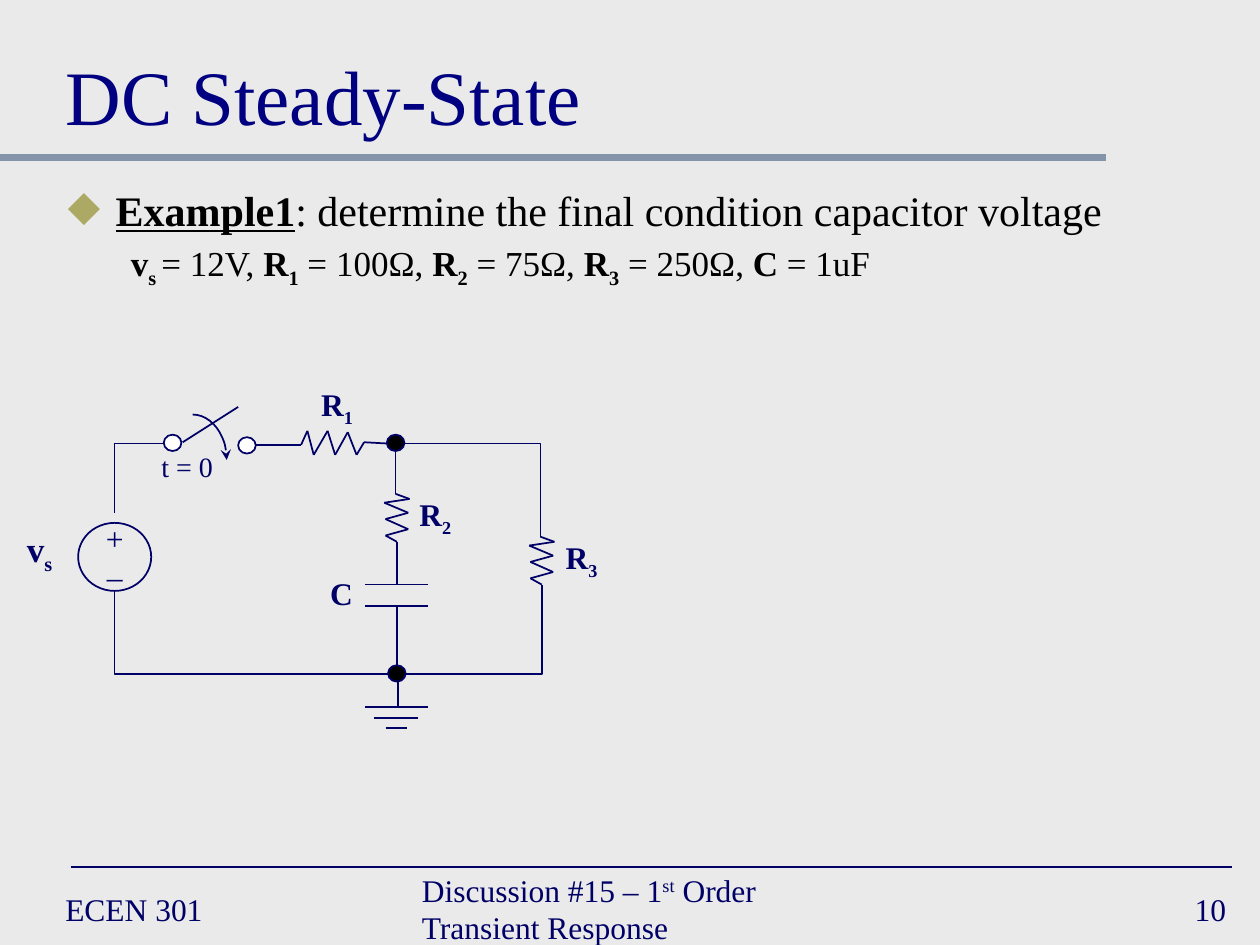
from dataclasses import dataclass
from itertools import pairwise

from lxml import etree
from pptx import Presentation
from pptx.dml.color import RGBColor
from pptx.enum.shapes import MSO_CONNECTOR, MSO_SHAPE
from pptx.enum.text import MSO_ANCHOR, PP_ALIGN
from pptx.oxml.ns import qn
from pptx.util import Inches, Pt

STRAIGHT, ELBOW = MSO_CONNECTOR.STRAIGHT, MSO_CONNECTOR.ELBOW
ELLIPSE, ARC = MSO_SHAPE.OVAL, MSO_SHAPE.ARC
LEFT, CENTER, RIGHT = PP_ALIGN.LEFT, PP_ALIGN.CENTER, PP_ALIGN.RIGHT
TOP, MIDDLE, BOTTOM = MSO_ANCHOR.TOP, MSO_ANCHOR.MIDDLE, MSO_ANCHOR.BOTTOM
SUB, SUPER = -25000, 30000


@dataclass(frozen=True)
class Theme:
    font: str = "Times New Roman"
    background: RGBColor = RGBColor(0xEA, 0xEA, 0xEA)
    ink: RGBColor = RGBColor(0, 0, 0x66)
    title: RGBColor = RGBColor(0, 0, 0x80)
    rule: RGBColor = RGBColor(0x84, 0x95, 0xA9)
    black: RGBColor = RGBColor(0, 0, 0)
    white: RGBColor = RGBColor(255, 255, 255)
    bullet: str = "ACA964"
    title_size: int = 44
    lead_size: int = 24
    body_size: int = 20
    label_size: int = 18
    small_size: int = 16


THEME = Theme()


def add_run(p, text, size, color=THEME.ink, bold=False, underline=False, baseline=0):
    r = p.add_run()
    r.text = text
    font = r.font
    font.name, font.size, font.bold = THEME.font, Pt(size), bold
    font.underline = underline
    font.color.rgb = color
    if baseline:
        r._r.get_or_add_rPr().set("baseline", str(baseline))


def add_box(slide, box, wrap=False, anchor=TOP):
    tf = slide.shapes.add_textbox(*map(Inches, box)).text_frame
    tf.word_wrap = wrap
    tf.vertical_anchor = anchor
    return tf


def add_label(slide, box, text, sub="", size=THEME.label_size, bold=True,
              align=CENTER, anchor=TOP):
    tf = add_box(slide, box, anchor=anchor)
    p = tf.paragraphs[0]
    p.alignment = align
    add_run(p, text, size, bold=bold)
    if sub:
        add_run(p, sub, size, bold=bold, baseline=SUB)
    return tf


def add_wire(slide, start, end, kind=STRAIGHT, color=THEME.ink, width=1):
    """Draw a wire; an elbow runs sideways first, then up or down."""
    points = map(Inches, (*start, *end))
    wire = slide.shapes.add_connector(kind, *points)
    wire.line.color.rgb = color
    wire.line.width = Pt(width)
    props = wire._element.spPr
    etree.SubElement(props, qn("a:effectLst"))
    if kind == ELBOW:
        props.find(qn("a:prstGeom")).set("prst", "bentConnector2")


def add_outline(slide, kind, box, fill=None):
    sp = slide.shapes.add_shape(kind, *map(Inches, box))
    sp.shadow.inherit = False
    sp.line.color.rgb = THEME.ink
    sp.line.width = Pt(1)
    if fill is None:
        sp.fill.background()
    else:
        sp.fill.solid()
        sp.fill.fore_color.rgb = fill
    return sp


def add_node(slide, left, top, fill):
    add_outline(slide, ELLIPSE, (left, top, 0.14, 0.13), fill)


def add_zigzag(slide, left, top, offsets):
    points = [(left + dx, top + dy) for dx, dy in offsets]
    for start, end in pairwise(points):
        add_wire(slide, start, end)


def add_title(slide):
    title = slide.shapes.title
    title.left, title.top, title.width, title.height = map(
        Inches, (0.42, 0.17, 9.17, 1))
    tf = title.text_frame
    tf.vertical_anchor = BOTTOM
    p = tf.paragraphs[0]
    p.alignment = LEFT
    add_run(p, "DC Steady-State", THEME.title_size, THEME.title)


def add_bullet(p):
    props = p._p.get_or_add_pPr()
    props.set("marL", str(Inches(0.38)))
    props.set("indent", str(Inches(-0.38)))
    color = etree.SubElement(props, qn("a:buClr"))
    etree.SubElement(color, qn("a:srgbClr")).set("val", THEME.bullet)
    etree.SubElement(props, qn("a:buChar")).set("char", "◆")


def add_problem(slide):
    tf = add_box(slide, (0.44, 1.46, 9.14, 1.12), wrap=True)
    lead = tf.paragraphs[0]
    add_bullet(lead)
    lead.line_spacing = 0.9
    add_run(lead, "Example1", THEME.lead_size, THEME.black, bold=True, underline=True)
    add_run(lead, ": determine the final condition capacitor voltage",
            THEME.lead_size, THEME.black)

    given = tf.add_paragraph()
    given._p.get_or_add_pPr().set("marL", str(Inches(0.81)))
    given._p.get_or_add_pPr().set("indent", str(Inches(-0.31)))
    given.line_spacing = 0.9
    given.space_before = Pt(4)
    values = [("v", "s ", "= 12V, "), ("R", "1", " = 100Ω, "), ("R", "2", " = 75Ω, "),
              ("R", "3", " = 250Ω, "), ("C ", "", "= 1uF")]
    for name, sub, value in values:
        add_run(given, name, THEME.body_size, THEME.black, bold=True)
        if sub:
            add_run(given, sub, THEME.body_size, THEME.black, bold=True, baseline=SUB)
        add_run(given, value, THEME.body_size, THEME.black)


def add_footer(slide):
    add_label(slide, (0.42, 7, 2.17, 0.42), "ECEN 301", bold=False,
              align=LEFT, anchor=MIDDLE)
    p = add_box(slide, (3.25, 7, 3.83, 0.42), anchor=MIDDLE).paragraphs[0]
    for text, baseline in [("Discussion #15 – 1", 0), ("st", SUPER),
                           (" Order Transient Response", 0)]:
        add_run(p, text, THEME.label_size, baseline=baseline)
    add_label(slide, (7.75, 7, 2.08, 0.42), "10", bold=False,
              align=RIGHT, anchor=MIDDLE)


def add_wiring(slide):
    for start, end in [((3.08, 5.35), (0.91, 4.69)), ((1.3, 3.52), (0.91, 4.07)),
                       ((3.21, 3.52), (4.29, 4.26)), ((3.22, 5.35), (4.3, 4.64))]:
        add_wire(slide, start, end, ELBOW)
    for start, end in [((2.39, 3.53), (2.03, 3.53)), ((3.07, 3.52), (2.89, 3.51)),
                       ((3.14, 3.58), (3.14, 3.92)), ((3.15, 4.64), (3.15, 4.3)),
                       ((3.15, 5.28), (3.15, 4.81)), ((3.16, 5.6), (3.16, 5.35))]:
        add_wire(slide, start, end)
    plates = [(2.9, 3.4, 4.64), (2.9, 3.4, 4.81)]
    ground = [(2.9, 3.4, 5.61), (2.97, 3.32, 5.7), (3.06, 3.23, 5.78)]
    for left, right, y in plates + ground:
        add_wire(slide, (left, y), (right, y))


def add_resistors(slide):
    flat = [(0, 0), (0.05, -0.11), (0.1, 0.08), (0.21, -0.11), (0.27, 0.08),
            (0.37, -0.1), (0.44, 0.08), (0.5, -0.02)]
    upright = [(0, 0), (0.11, 0.04), (-0.09, 0.07), (0.1, 0.15), (-0.08, 0.2),
               (0.1, 0.28), (-0.08, 0.33), (0.01, 0.38)]
    add_zigzag(slide, 2.39, 3.53, flat)
    add_zigzag(slide, 3.14, 3.92, upright)
    add_zigzag(slide, 4.29, 4.26, upright)
    for left, top, number in [(2.44, 3.01, "1"), (3.22, 3.88, "2"), (4.38, 4.22, "3")]:
        add_label(slide, (left, top, 0.47, 0.4), "R", number)
    add_label(slide, (2.52, 4.51, 0.38, 0.4), "C")


def add_source(slide):
    add_outline(slide, ELLIPSE, (0.62, 4.15, 0.58, 0.54))
    tf = add_label(slide, (0.74, 4.07, 0.34, 0.7), "+", bold=False)
    minus = tf.add_paragraph()
    minus.alignment = CENTER
    add_run(minus, "–", THEME.label_size)
    add_label(slide, (0.11, 3.83, 0.41, 1.1), "v", "s", THEME.body_size, anchor=MIDDLE)


def add_switch(slide):
    add_wire(slide, (1.45, 3.51), (1.89, 3.23))
    swing = add_outline(slide, ARC, (1.26, 3.29, 0.54, 0.72))
    etree.SubElement(swing.line._get_or_add_ln(), qn("a:tailEnd")).set("type", "stealth")
    add_label(slide, (1.18, 3.52, 0.61, 0.37), "t = 0",
              size=THEME.small_size, bold=False)


def main():
    prs = Presentation()
    prs.slide_width, prs.slide_height = Inches(10), Inches(7.5)
    slide = prs.slides.add_slide(prs.slide_layouts[5])
    slide.background.fill.solid()
    slide.background.fill.fore_color.rgb = THEME.background
    add_wire(slide, (0, 1.25), (8.78, 1.25), color=THEME.rule, width=4)
    add_wire(slide, (0.56, 6.88), (9.78, 6.88))
    add_footer(slide)
    add_title(slide)
    add_problem(slide)
    add_wiring(slide)
    add_resistors(slide)
    add_source(slide)
    add_switch(slide)
    for left, top, fill in [(3.07, 3.45, THEME.black), (3.08, 5.28, THEME.black),
                            (1.3, 3.45, THEME.white), (1.89, 3.47, THEME.white)]:
        add_node(slide, left, top, fill)
    prs.save("out.pptx")


if __name__ == "__main__":
    main()
